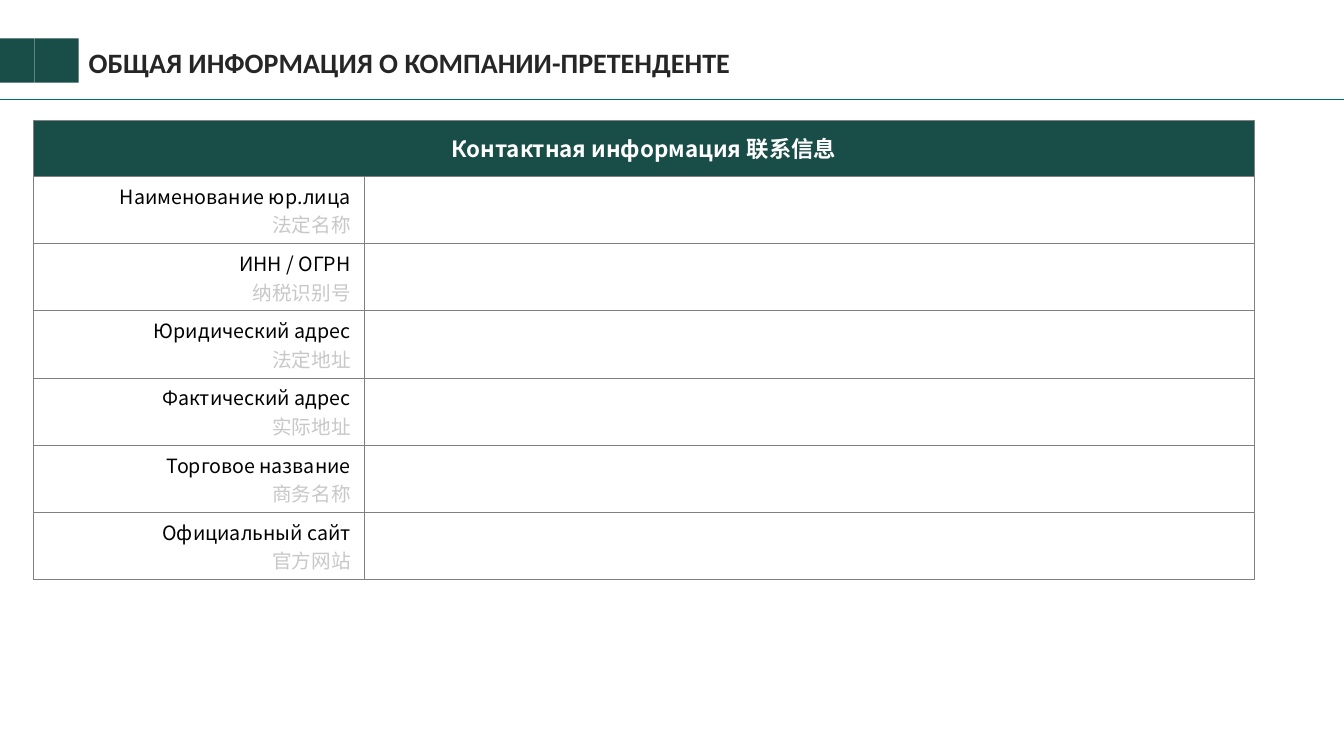
from dataclasses import dataclass

from lxml.etree import SubElement
from pptx import Presentation
from pptx.dml.color import RGBColor
from pptx.enum.shapes import MSO_CONNECTOR, MSO_SHAPE
from pptx.enum.text import MSO_ANCHOR, PP_ALIGN
from pptx.oxml import parse_xml
from pptx.oxml.ns import nsdecls, qn
from pptx.util import Inches, Pt


@dataclass(frozen=True)
class Theme:
    green: str = "194D48"
    teal: str = "00726D"
    dark: str = "262626"
    black: str = "000000"
    white: str = "FFFFFF"
    pale: str = "C8C8C8"
    grid: str = "808080"
    title: int = 20
    head: int = 16
    body: int = 14
    latin: str = "Calibri"
    asian: str = "Noto Sans CJK SC"


THEME = Theme()
WIDTH, HEIGHT = 13.33, 7.5

HEADING = "ОБЩАЯ ИНФОРМАЦИЯ О КОМПАНИИ-ПРЕТЕНДЕНТЕ"
CAPTION = "Контактная информация 联系信息"
FIELDS = [
    ("Наименование юр.лица", "法定名称"),
    ("ИНН / ОГРН", "纳税识别号"),
    ("Юридический адрес", "法定地址"),
    ("Фактический адрес", "实际地址"),
    ("Торговое название", "商务名称"),
    ("Официальный сайт", "官方网站"),
]


def tint(name):
    return RGBColor.from_string(name)


def add_run(para, text, size, color, face, bold=False):
    run = para.add_run()
    run.text = text
    font = run.font
    font.size = Pt(size)
    font.bold = bold
    font.name = face
    font.color.rgb = tint(color)
    SubElement(run._r.get_or_add_rPr(), qn("a:ea"), typeface=face)


def add_border(cell):
    props = cell._tc.get_or_add_tcPr()
    for index, side in enumerate(("lnL", "lnR", "lnT", "lnB")):
        line = parse_xml(
            f'<a:{side} {nsdecls("a")} w="{Pt(0.75)}"><a:solidFill>'
            f'<a:srgbClr val="{THEME.grid}"/></a:solidFill></a:{side}>'
        )
        props.insert(index, line)


def style_cell(cell):
    cell.vertical_anchor = MSO_ANCHOR.MIDDLE
    cell.margin_left = cell.margin_right = Inches(0.13)
    cell.margin_top = cell.margin_bottom = Inches(0.05)
    cell.fill.background()
    add_border(cell)


def add_header(slide, left, top, width, height):
    rule = slide.shapes.add_connector(
        MSO_CONNECTOR.STRAIGHT, Inches(left), Inches(top + height),
        Inches(left + width), Inches(top + height),
    )
    rule.line.color.rgb = tint(THEME.teal)
    rule.line.width = Pt(0.5)
    SubElement(rule._element.spPr, qn("a:effectLst"))

    edge = left
    for span in (0.34, 0.44):
        block = slide.shapes.add_shape(
            MSO_SHAPE.RECTANGLE, Inches(edge), Inches(top + 0.07),
            Inches(span), Inches(0.44),
        )
        block.shadow.inherit = False
        block.fill.solid()
        block.fill.fore_color.rgb = tint(THEME.green)
        block.line.fill.background()
        edge += span

    box = slide.shapes.add_textbox(
        Inches(edge), Inches(top), Inches(12.18), Inches(0.66)
    )
    frame = box.text_frame
    frame.word_wrap = True
    frame.vertical_anchor = MSO_ANCHOR.MIDDLE
    para = frame.paragraphs[0]
    para.line_spacing = 0.9
    add_run(para, HEADING, THEME.title, THEME.dark, THEME.latin, True)


def add_form(slide, left, top, width, height):
    label, head = 3.28, 0.56
    table = slide.shapes.add_table(
        len(FIELDS) + 1, 2, Inches(left), Inches(top),
        Inches(width), Inches(height),
    ).table
    table.first_row = table.horz_banding = False
    table.columns[0].width = Inches(label)
    table.columns[1].width = Inches(width - label)
    for index, row in enumerate(table.rows):
        row.height = Inches((height - head) / len(FIELDS) if index else head)
    for cell in table.iter_cells():
        style_cell(cell)

    title = table.cell(0, 0)
    title.merge(table.cell(0, 1))
    title.fill.solid()
    title.fill.fore_color.rgb = tint(THEME.green)
    para = title.text_frame.paragraphs[0]
    para.alignment = PP_ALIGN.CENTER
    add_run(para, CAPTION, THEME.head, THEME.white, THEME.asian, True)

    for index, (name, gloss) in enumerate(FIELDS, 1):
        frame = table.cell(index, 0).text_frame
        first, second = frame.paragraphs[0], frame.add_paragraph()
        first.alignment = second.alignment = PP_ALIGN.RIGHT
        add_run(first, name, THEME.body, THEME.black, THEME.asian)
        add_run(second, gloss, THEME.body, THEME.pale, THEME.asian)


def main():
    deck = Presentation()
    deck.slide_width, deck.slide_height = Inches(WIDTH), Inches(HEIGHT)
    slide = deck.slides.add_slide(deck.slide_layouts[6])
    add_header(slide, 0, 0.31, WIDTH, 0.68)
    add_form(slide, 0.33, 1.19, 12.11, 4.56)
    deck.save("out.pptx")


if __name__ == "__main__":
    main()
